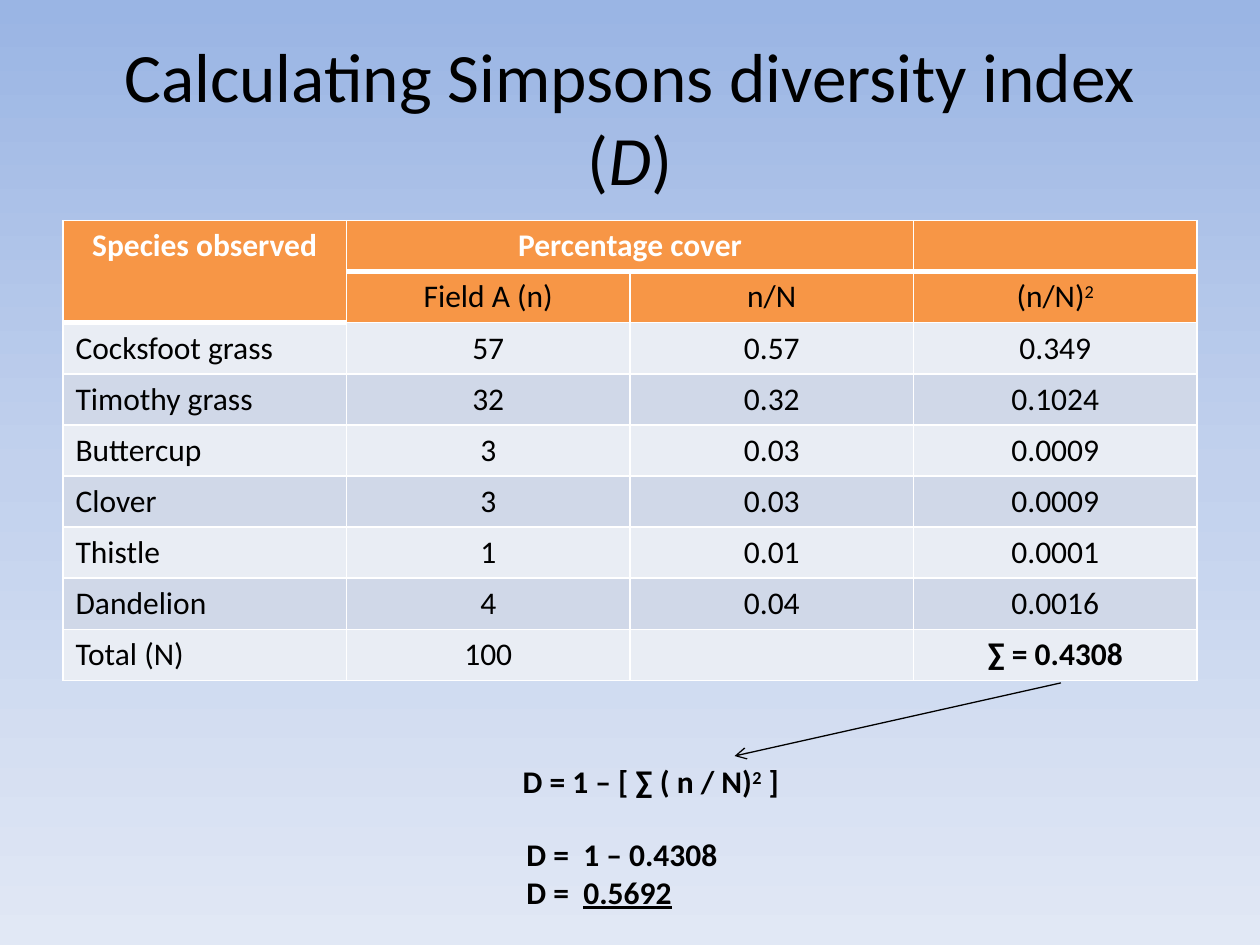
import copy

import pptx
import pptx.dml.color
import pptx.enum.shapes
import pptx.enum.text
import pptx.oxml
import pptx.oxml.ns
import pptx.util

Inches = pptx.util.Inches
Pt = pptx.util.Pt
CENTER = pptx.enum.text.PP_ALIGN.CENTER
LEFT = pptx.enum.text.PP_ALIGN.LEFT
MIDDLE = pptx.enum.text.MSO_ANCHOR.MIDDLE
TOP = pptx.enum.text.MSO_ANCHOR.TOP

ROWS = [
    ["Species observed", "Percentage cover", "", ""],
    ["", "Field A (n)", "n/N", [("(n/N)", ""), ("2", "super")]],
    ["Cocksfoot grass", "57", "0.57", "0.349"],
    ["Timothy grass", "32", "0.32", "0.1024"],
    ["Buttercup", "3", "0.03", "0.0009"],
    ["Clover", "3", "0.03", "0.0009"],
    ["Thistle", "1", "0.01", "0.0001"],
    ["Dandelion", "4", "0.04", "0.0016"],
    ["Total (N)", "100", "", [("∑ = 0.4308", "bold")]],
]


def color(value):
    return pptx.dml.color.RGBColor.from_string(value)


def element(tag, body="", attributes=""):
    namespace = pptx.oxml.ns.nsdecls("a")
    return pptx.oxml.parse_xml(f"<a:{tag} {namespace} {attributes}>{body}</a:{tag}>")


class SlideBuilder:
    """Hold the style and the current slide, and draw each kind of element."""

    font = "Calibri"
    ink = "000000"
    white = "FFFFFF"
    header = "F79646"
    bands = ("E9EDF4", "D0D8E8")

    def __init__(self, deck):
        self.page = deck.slides.add_slide(deck.slide_layouts[6])

    def background(self, colors):
        fill = self.page.background.fill
        fill.gradient()
        fill.gradient_angle = 270
        stop_list = self.page.element.find(".//" + pptx.oxml.ns.qn("a:gsLst"))
        stop_list.insert(1, copy.deepcopy(stop_list[0]))
        for index, (stop, value) in enumerate(zip(fill.gradient_stops, colors)):
            stop.position = index / (len(colors) - 1)
            stop.color.rgb = color(value)

    def add_spans(self, para, spans, size=18, ink=ink, align=LEFT):
        para.alignment = align
        for text, marks in spans:
            span = para.add_run()
            span.text = text
            font = span.font
            font.name = self.font
            font.size = Pt(size)
            font.color.rgb = color(ink)
            font.bold = "bold" in marks
            font.italic = "italic" in marks
            font.underline = "under" in marks
            if "super" in marks:
                font._element.set("baseline", "30000")

    def text(self, left, top, width, height, lines, size=18, align=LEFT, anchor=TOP):
        box = self.page.shapes.add_textbox(
            Inches(left), Inches(top), Inches(width), Inches(height))
        frame = box.text_frame
        frame.word_wrap = True
        frame.vertical_anchor = anchor
        for index, spans in enumerate(lines):
            para = frame.add_paragraph() if index else frame.paragraphs[0]
            self.add_spans(para, spans, size, align=align)

    def borders(self, cell, top, bottom):
        fill = f'<a:solidFill><a:srgbClr val="{self.white}"/></a:solidFill>'
        properties = cell._tc.get_or_add_tcPr()
        for side, width in (("L", 1), ("R", 1), ("T", top), ("B", bottom)):
            properties.append(element(f"ln{side}", fill, f'w="{int(Pt(width))}"'))

    def table(self, left, top, width, height, rows):
        count, columns = len(rows), len(rows[0])
        grid = self.page.shapes.add_table(
            count, columns, Inches(left), Inches(top), Inches(width), Inches(height)).table
        for row, values in enumerate(rows):
            grid.rows[row].height = Inches(height / count)
            for column, value in enumerate(values):
                cell = grid.cell(row, column)
                last_header = 1 if column == 0 else 0
                self.borders(cell, 3 if row == last_header + 1 else 1,
                             3 if row <= last_header else 1)
                cell.fill.solid()
                cell.fill.fore_color.rgb = color(
                    self.header if row < 2 else self.bands[row % 2])
                if value:
                    marks = "bold" if row == 0 else ""
                    spans = [(value, marks)] if isinstance(value, str) else value
                    self.add_spans(cell.text_frame.paragraphs[0], spans,
                                   ink=self.white if row == 0 else self.ink,
                                   align=LEFT if row > 1 and column == 0 else CENTER)
        grid.cell(0, 0).merge(grid.cell(1, 0))
        grid.cell(0, 1).merge(grid.cell(0, 2))

    def arrow(self, start_x, start_y, end_x, end_y):
        line = self.page.shapes.add_connector(
            pptx.enum.shapes.MSO_CONNECTOR.STRAIGHT,
            Inches(start_x), Inches(start_y), Inches(end_x), Inches(end_y))
        line.line.color.rgb = color(self.ink)
        line.line.width = Pt(0.75)
        line.line._get_or_add_ln().append(element("tailEnd", attributes='type="arrow"'))
        line._element.spPr.append(element("effectLst"))


def main():
    deck = pptx.Presentation()
    deck.slide_width, deck.slide_height = Inches(10), Inches(7.5)
    slide = SlideBuilder(deck)
    slide.background(["9AB5E4", "C2D1ED", "E1E8F5"])
    slide.text(0.5, 0.3, 9, 1.25,
               [[("Calculating Simpsons diversity index (", ""), ("D", "italic"), (")", "")]],
               size=39.6, align=CENTER, anchor=MIDDLE)
    slide.table(0.5, 1.75, 9, 3.65, ROWS)
    slide.text(0.83, 6, 8.67, 0.4,
               [[("D = 1 – [ ∑ ( n / N)", "bold"), ("2", "bold super"), (" ]", "bold")]],
               align=CENTER)
    slide.arrow(8.42, 5.42, 5.83, 6)
    slide.text(4.08, 6.58, 2.58, 0.71,
               [[("D =  1 – 0.4308", "bold")],
                [("D =  ", "bold"), ("0.5692", "bold under")]])
    deck.save("out.pptx")


if __name__ == "__main__":
    main()
